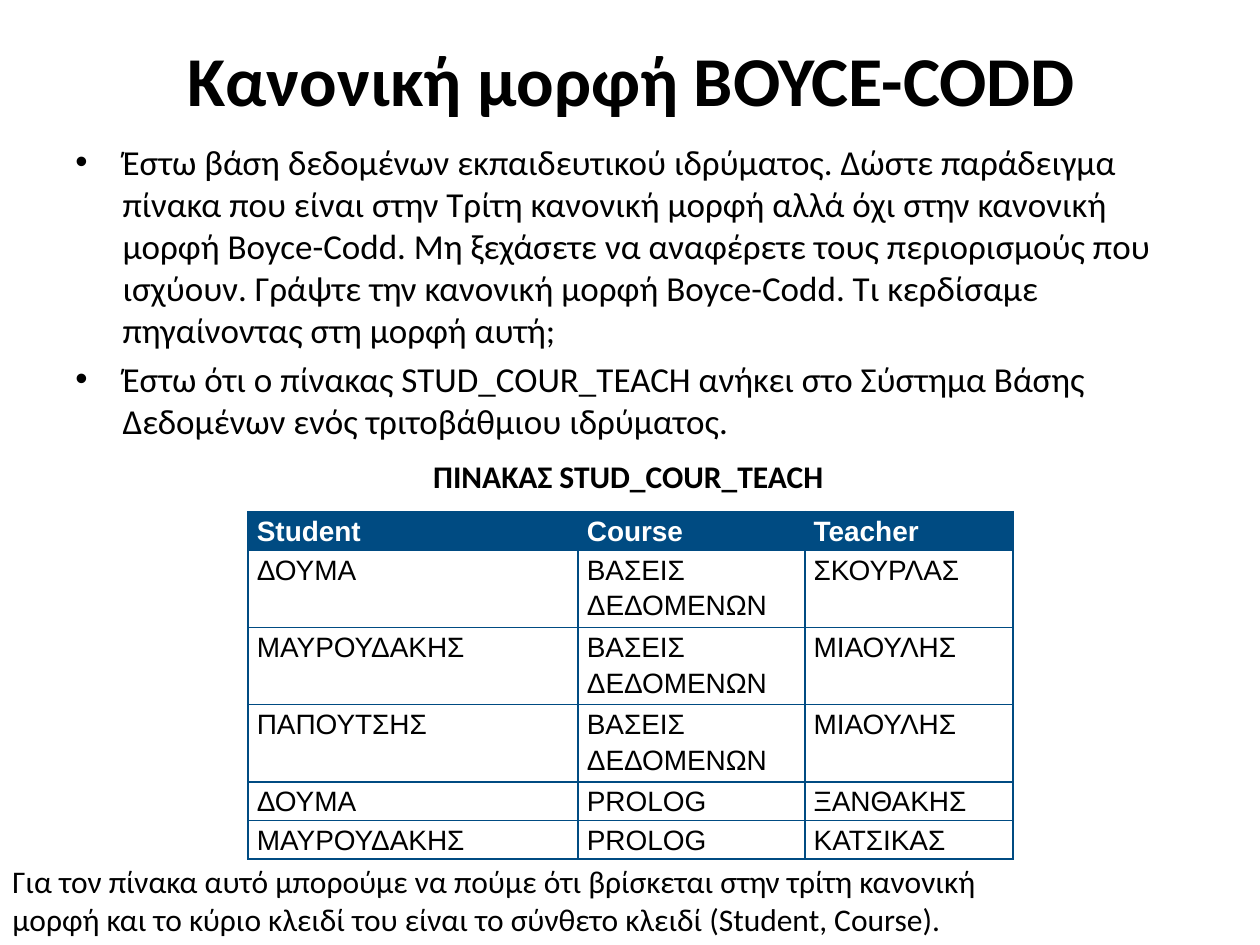
import pptx
import pptx.dml.color
import pptx.enum.text
import pptx.oxml.ns
import pptx.util
from lxml import etree

Pt = pptx.util.Pt
ALIGN = pptx.enum.text.PP_ALIGN
ANCHOR = pptx.enum.text.MSO_ANCHOR
BLACK = pptx.dml.color.RGBColor(0x00, 0x00, 0x00)
WHITE = pptx.dml.color.RGBColor(0xFF, 0xFF, 0xFF)
NAVY = pptx.dml.color.RGBColor(0x00, 0x4B, 0x82)


def add_element(parent, tag, **attributes):
    return etree.SubElement(parent, pptx.oxml.ns.qn(tag), attributes)


def write(paragraph, text, size=18, font="Calibri", color=BLACK, bold=False,
          align=ALIGN.LEFT, line_spacing=None, space_before=None):
    paragraph.alignment = align
    paragraph.line_spacing = line_spacing
    if space_before is not None:
        paragraph.space_before = Pt(space_before)
    run = paragraph.add_run()
    run.text = text
    run.font.size = Pt(size)
    run.font.name = font
    run.font.bold = bold
    run.font.color.rgb = color


class SlideBuilder:
    text_font = "Calibri"
    table_font = "Arial"
    bullet_indent = 27
    cell_margin = 5

    def __init__(self, slide):
        self.slide = slide

    def frame(self, left, top, width, height, wrap=True, anchor=ANCHOR.TOP):
        shape = self.slide.shapes.add_textbox(Pt(left), Pt(top), Pt(width), Pt(height))
        shape.text_frame.word_wrap = wrap
        shape.text_frame.vertical_anchor = anchor
        return shape.text_frame

    def text(self, text, left, top, width, height, wrap=True, anchor=ANCHOR.TOP, **style):
        frame = self.frame(left, top, width, height, wrap, anchor)
        write(frame.paragraphs[0], text, font=self.text_font, **style)

    def bullets(self, items, left, top, width, height, **style):
        frame = self.frame(left, top, width, height)
        for index, item in enumerate(items):
            paragraph = frame.add_paragraph() if index else frame.paragraphs[0]
            write(paragraph, item, font=self.text_font, **style)
            properties = paragraph._p.get_or_add_pPr()
            properties.set("marL", str(Pt(self.bullet_indent)))
            properties.set("indent", str(-Pt(self.bullet_indent)))
            add_element(properties, "a:buFont", typeface="Arial")
            add_element(properties, "a:buChar", char="•")

    def borders(self, cell):
        properties = cell._tc.get_or_add_tcPr()
        for side in ("a:lnL", "a:lnR", "a:lnT", "a:lnB"):
            line = add_element(properties, side, w=str(Pt(1)))
            add_element(add_element(line, "a:solidFill"), "a:srgbClr", val=str(NAVY))

    def table(self, rows, left, top, column_widths, row_heights):
        table = self.slide.shapes.add_table(
            len(rows), len(column_widths), Pt(left), Pt(top),
            Pt(sum(column_widths)), Pt(sum(row_heights))).table
        table.horz_banding = False
        for column, width in zip(table.columns, column_widths):
            column.width = Pt(width)
        for row, height in zip(table.rows, row_heights):
            row.height = Pt(height)
        for row_index, values in enumerate(rows):
            header = row_index == 0
            for column_index, value in enumerate(values):
                cell = table.cell(row_index, column_index)
                cell.margin_left = cell.margin_right = Pt(self.cell_margin)
                cell.margin_top = cell.margin_bottom = 0
                self.borders(cell)
                cell.fill.solid()
                cell.fill.fore_color.rgb = NAVY if header else WHITE
                write(cell.text_frame.paragraphs[0], value, size=16,
                      font=self.table_font, color=WHITE if header else BLACK,
                      bold=header, line_spacing=1.15)


def main():
    presentation = pptx.Presentation()
    presentation.slide_width, presentation.slide_height = Pt(720), Pt(540)
    slide = presentation.slides.add_slide(presentation.slide_layouts[6])
    builder = SlideBuilder(slide)

    # Title
    builder.text("Κανονική μορφή BOYCE-CODD", 36.7, 9.4, 648, 71.3,
                 anchor=ANCHOR.MIDDLE, size=40, bold=True, align=ALIGN.CENTER)

    # Exercise
    builder.bullets([
        "Έστω βάση δεδομένων εκπαιδευτικού ιδρύματος. Δώστε παράδειγμα πίνακα που "
        "είναι στην Τρίτη κανονική μορφή αλλά όχι στην κανονική μορφή Boyce-Codd. "
        "Μη ξεχάσετε να αναφέρετε τους περιορισμούς που ισχύουν. Γράψτε την κανονική "
        "μορφή Boyce-Codd. Τι κερδίσαμε πηγαίνοντας στη μορφή αυτή;",
        "Έστω ότι ο πίνακας STUD_COUR_TEACH ανήκει στο Σύστημα Βάσης Δεδομένων ενός "
        "τριτοβάθμιου ιδρύματος.",
    ], 36, 77, 648, 187.2, size=20, space_before=4)

    # Table with its caption
    builder.text("ΠΙΝΑΚΑΣ STUD_COUR_TEACH", 240.5, 257.8, 239.8, 28.8,
                 wrap=False, bold=True)
    single, double = 22.08, 44.16
    builder.table([
        ("Student", "Course", "Teacher"),
        ("ΔΟΥΜΑ", "ΒΑΣΕΙΣ ΔΕΔΟΜΕΝΩΝ", "ΣΚΟΥΡΛΑΣ"),
        ("ΜΑΥΡΟΥΔΑΚΗΣ", "ΒΑΣΕΙΣ ΔΕΔΟΜΕΝΩΝ", "ΜΙΑΟΥΛΗΣ"),
        ("ΠΑΠΟΥΤΣΗΣ", "ΒΑΣΕΙΣ ΔΕΔΟΜΕΝΩΝ", "ΜΙΑΟΥΛΗΣ"),
        ("ΔΟΥΜΑ", "PROLOG", "ΞΑΝΘΑΚΗΣ"),
        ("ΜΑΥΡΟΥΔΑΚΗΣ", "PROLOG", "ΚΑΤΣΙΚΑΣ"),
    ], 141.8, 292.3, [188.6, 129.6, 118.8],
        [single] + [double] * 3 + [single] * 2)

    # Conclusion
    builder.text("Για τον πίνακα αυτό μπορούμε να πούμε ότι βρίσκεται στην τρίτη "
                 "κανονική μορφή και το κύριο κλειδί του είναι το σύνθετο κλειδί "
                 "(Student, Course).", 0, 488.9, 617.8, 51.1)

    presentation.save("out.pptx")


if __name__ == "__main__":
    main()
